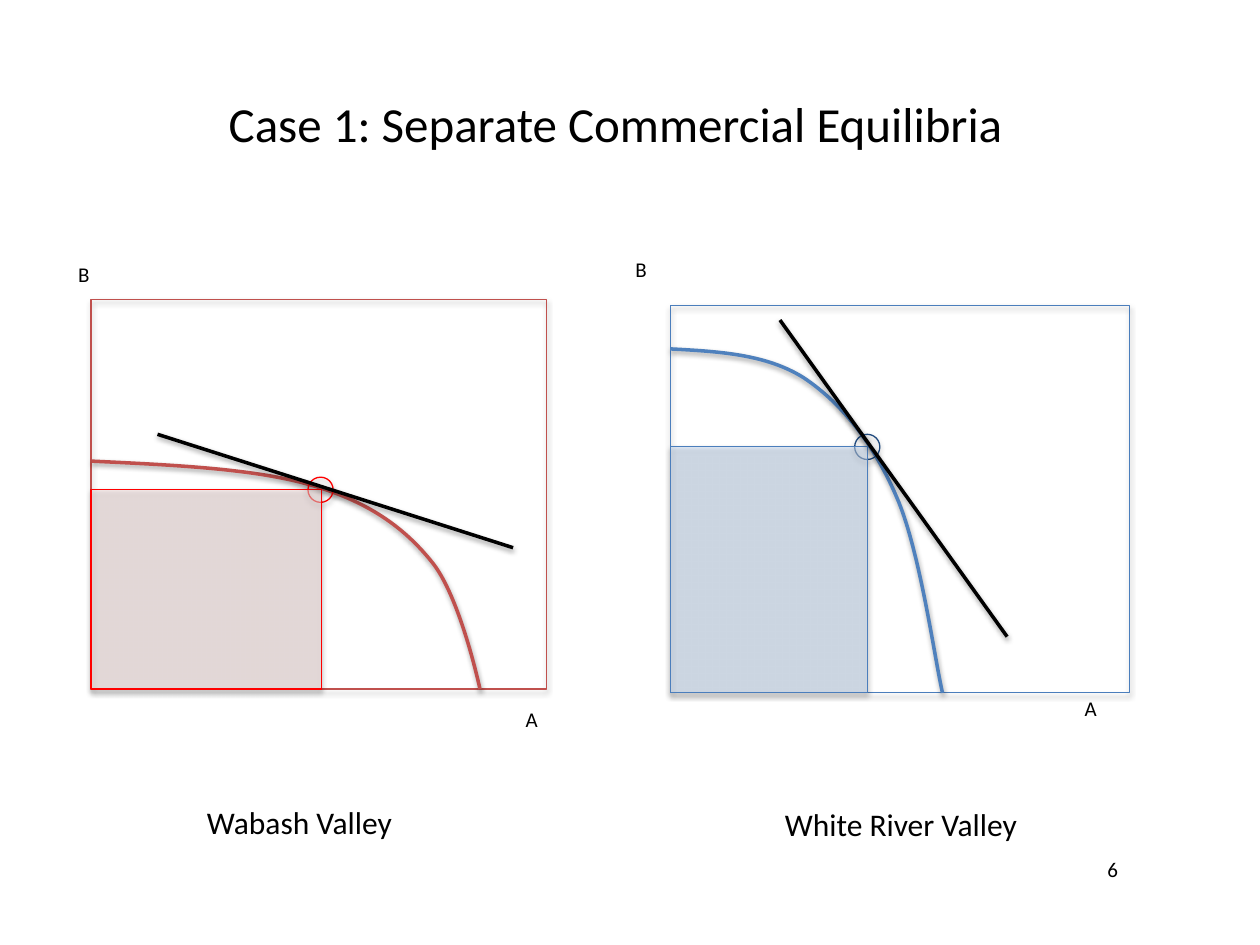
from lxml.etree import SubElement
from pptx import Presentation
from pptx.dml.color import RGBColor
from pptx.enum.shapes import MSO_CONNECTOR as CONN, MSO_SHAPE as SHAPE
from pptx.enum.text import MSO_ANCHOR as ANCHOR, MSO_AUTO_SIZE as AUTO, PP_ALIGN as ALIGN
from pptx.oxml.ns import qn
from pptx.util import Pt

COLORS = {
    "text": "000000", "price": "000000", "shadow": "000000", "label": "FFFFFF",
    "red_frame": "C0504D", "red_mark": "FF0000", "red_fill": "F2DCDB",
    "blue_frame": "4B7EBC", "blue_curve": "4F81BD",
    "blue_mark": "1F497D", "blue_fill": "C6D9F1",
}
THIN = {"width": 0.75, "blur": 3.1, "dist": 1.8, "alpha": 35}
THICK = {"width": 2, "blur": 3.1, "dist": 1.6, "alpha": 38}

WABASH = {
    "name": ("Wabash Valley", (111.2, 455.3, 131.8, 30.2)),
    "axes": [("B", (37.6, 145.8, 41, 21.6)), ("A", (293.3, 400, 47.5, 21.6))],
    "frame": (52.1, 171.2, 260.1, 222.6),
    "curve": [(52.6, 263.5), (98.6, 265.7), (145.4, 267.8), (177.8, 277.2),
              (210.2, 286.6), (230.4, 301), (246.2, 320.4),
              (262.8, 339.8), (274.3, 393.8), (274.3, 393.8)],
    "mark": (176, 272.7, 14.4, 14.4),
    "output": (52.1, 279.8, 131.8, 114),
    "price": (90, 248.2, 293.2, 313),
    "colors": {"frame": "red_frame", "curve": "red_frame", "mark": "red_mark",
               "output": "red_mark", "fill": "red_fill"},
}
WHITE_RIVER = {
    "name": ("White River Valley", (441.4, 456.5, 171.4, 28.8)),
    "axes": [("A", (612.7, 393.8, 43.9, 21.6)), ("B", (356, 143.3, 42.5, 21.6))],
    "frame": (383.1, 174.5, 262.3, 221.2),
    "curve": [(383, 199.4), (410.4, 200.9), (437.8, 202.3), (459.4, 216),
              (481, 230.4), (499, 253.4), (511.9, 283),
              (525.6, 313.2), (534.2, 377.3), (538.6, 396)],
    "mark": (488.4, 248.2, 14.4, 14.4),
    "output": (383.1, 255.1, 112.6, 140.6),
    "price": (445.7, 182.9, 575.5, 363.8),
    "colors": {"frame": "blue_frame", "curve": "blue_curve", "mark": "blue_mark",
               "output": "blue_frame", "fill": "blue_fill"},
}


def rgb(name):
    return RGBColor.from_string(COLORS[name])


def points(values):
    return [Pt(v) for v in values]


def write(sp, text, size=12, align=ALIGN.LEFT, **frame):
    tf = sp.text_frame
    fmt = {"word_wrap": True, "auto_size": AUTO.SHAPE_TO_FIT_TEXT,
           "vertical_anchor": ANCHOR.TOP, **frame}
    for key, value in fmt.items():
        setattr(tf, key, value)
    p = tf.paragraphs[0]
    p.alignment = align
    r = p.add_run()
    r.text = text
    for key, value in {"name": "Calibri", "size": Pt(size)}.items():
        setattr(r.font, key, value)
    r.font.color.rgb = rgb("text")


def add_text(parent, text, box, **fmt):
    write(parent.shapes.add_textbox(*points(box)), text, **fmt)


def add_bordered_text(parent, text, box):
    sp = parent.shapes.add_shape(SHAPE.RECTANGLE, *points(box))
    sp.shadow.inherit = False
    sp.fill.background()
    sp.line.color.rgb = rgb("label")
    sp.line.width = Pt(0.75)
    write(sp, text)


def set_stroke(sp, color, style):
    sp.line.color.rgb = rgb(color)
    sp.line.width = Pt(style["width"])
    effects = SubElement(sp._element.spPr, qn("a:effectLst"))
    shadow = SubElement(effects, qn("a:outerShdw"), blurRad=str(Pt(style["blur"])),
                        dist=str(Pt(style["dist"])), dir="5400000", rotWithShape="0")
    tone = SubElement(shadow, qn("a:srgbClr"), val=COLORS["shadow"])
    SubElement(tone, qn("a:alpha"), val=str(style["alpha"] * 1000))


def add_outline(parent, kind, box, color, fill=None):
    sp = parent.shapes.add_shape(kind, *points(box))
    if fill:
        sp.fill.solid()
        sp.fill.fore_color.rgb = rgb(fill)
        tone = sp._element.spPr.find(qn("a:solidFill"))[0]
        SubElement(tone, qn("a:alpha"), val="50000")
    else:
        sp.fill.background()
    set_stroke(sp, color, THIN)


def add_curve(parent, knots, color):
    builder = parent.shapes.build_freeform(*points(knots[0]))
    builder.add_line_segments([points(knot) for knot in knots[1:]], close=False)
    sp = builder.convert_to_shape()
    outline = next(sp._element.iter(qn("a:path")))
    segments = outline.findall(qn("a:lnTo"))
    for i in range(0, len(segments), 3):
        bezier = SubElement(outline, qn("a:cubicBezTo"))
        for segment in segments[i:i + 3]:
            bezier.append(segment[0])
            outline.remove(segment)
    sp.fill.background()
    set_stroke(sp, color, THICK)


def add_frontier(group, valley):
    colors = valley["colors"]
    add_outline(group, SHAPE.RECTANGLE, valley["frame"], colors["frame"])
    add_curve(group, valley["curve"], colors["curve"])


def add_equilibrium(parent, valley):
    colors = valley["colors"]
    add_outline(parent, SHAPE.OVAL, valley["mark"], colors["mark"])
    add_outline(parent, SHAPE.RECTANGLE, valley["output"], colors["output"], colors["fill"])
    line = parent.shapes.add_connector(CONN.STRAIGHT, *points(valley["price"]))
    set_stroke(line, "price", THICK)


def main():
    prs = Presentation()
    prs.slide_width, prs.slide_height = Pt(720), Pt(540)
    s = prs.slides.add_slide(prs.slide_layouts[6])
    add_text(s, "6", (625.7, 486, 40.3, 21.6))

    wabash = s.shapes.add_group_shape()
    for label, box in WABASH["axes"]:
        add_bordered_text(wabash, label, box)
    add_frontier(wabash, WABASH)
    for valley in (WABASH, WHITE_RIVER):
        add_text(s, *valley["name"], size=18)
    add_equilibrium(s, WABASH)

    white_river = s.shapes.add_group_shape()
    add_frontier(white_river, WHITE_RIVER)
    for label, box in WHITE_RIVER["axes"]:
        add_text(white_river, label, box)
    add_equilibrium(white_river, WHITE_RIVER)

    add_text(s, "Case 1: Separate Commercial Equilibria", (127.4, 50, 448.6, 41),
             size=28, align=ALIGN.CENTER, margin_left=0, margin_right=0)
    prs.save("out.pptx")


if __name__ == "__main__":
    main()
